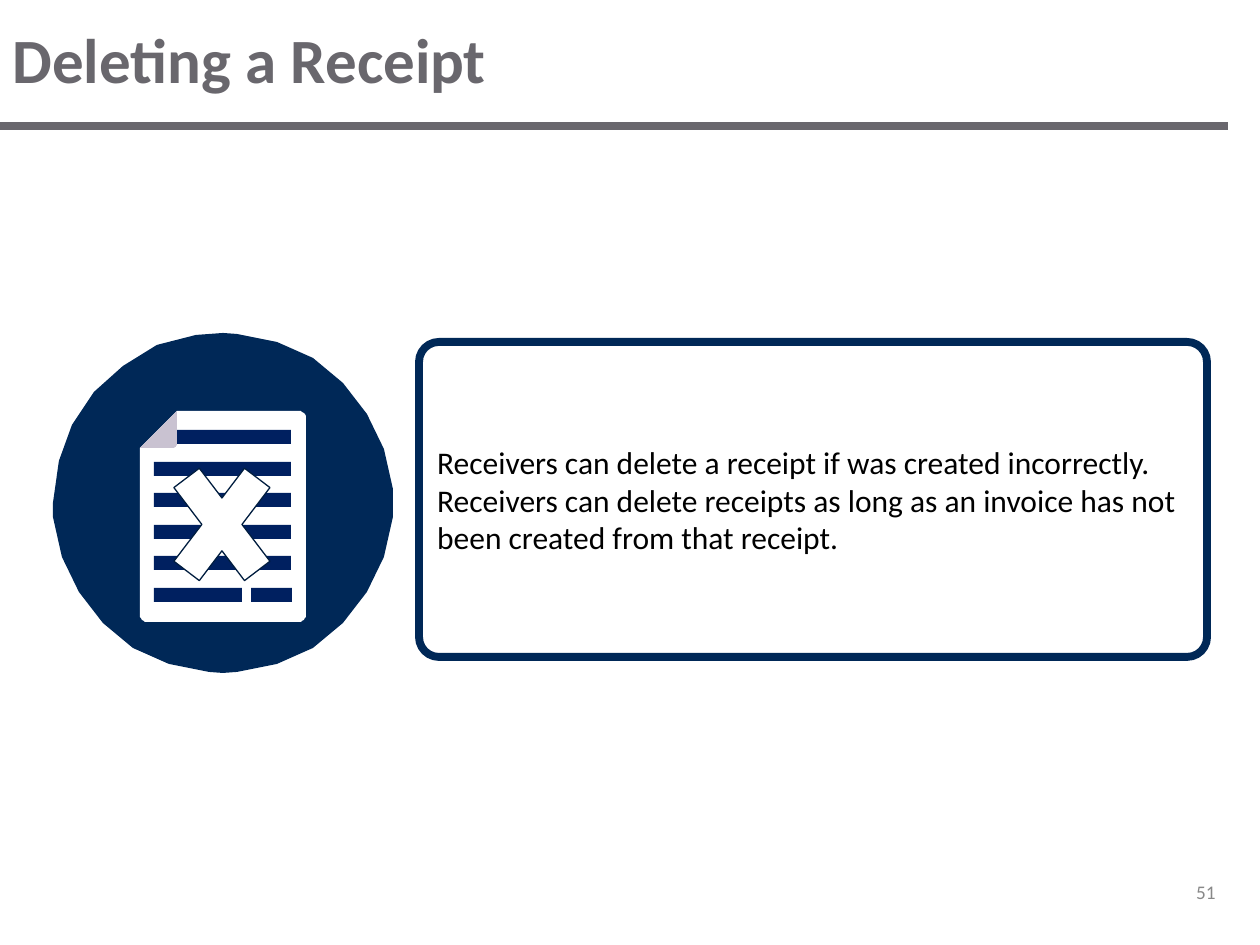
from dataclasses import dataclass
from math import cos, radians, sin

from lxml.etree import SubElement
from pptx import Presentation
from pptx.dml.color import RGBColor
from pptx.enum.shapes import MSO_CONNECTOR, MSO_SHAPE
from pptx.enum.text import MSO_ANCHOR, PP_ALIGN
from pptx.oxml.ns import qn
from pptx.util import Pt

PX = 914400 / 126


@dataclass(frozen=True)
class Theme:
    font: str = "Calibri"
    heading: str = "69676D"
    number: str = "888888"
    text: str = "000000"
    navy: str = "002857"
    bar: str = "002060"
    outline: str = "001D3F"
    paper: str = "FFFFFF"
    fold: str = "C9C2D1"
    title_pt: int = 36
    body_pt: int = 18
    number_pt: int = 11


THEME = Theme()


def emu(*lengths):
    return [round(n * PX) for n in lengths]


def rgb(color):
    return RGBColor.from_string(color)


def paint(sp, fill=None, line=None, width=0):
    sp.shadow.inherit = False
    if fill:
        sp.fill.solid()
        sp.fill.fore_color.rgb = rgb(fill)
    else:
        sp.fill.background()
    if line:
        sp.line.color.rgb = rgb(line)
        sp.line.width = Pt(width)
    else:
        sp.line.fill.background()


def add_preset(shapes, kind, box, **style):
    sp = shapes.add_shape(kind, *emu(*box))
    paint(sp, **style)
    return sp


def add_polygon(shapes, x, y, points, fill):
    start, *rest = [(x + px, y + py) for px, py in points]
    builder = shapes.build_freeform(*start, scale=PX)
    builder.add_line_segments(rest, close=True)
    paint(builder.convert_to_shape(), fill)


def corner(cx, cy, radius, start):
    angles = [radians(start + step) for step in range(0, 91, 15)]
    return [(cx + radius * cos(a), cy + radius * sin(a)) for a in angles]


def write(sp, text, size, color, align=PP_ALIGN.LEFT, bold=False):
    tf = sp.text_frame
    tf.word_wrap = True
    tf.vertical_anchor = MSO_ANCHOR.MIDDLE
    p = tf.paragraphs[0]
    p.alignment = align
    r = p.add_run()
    r.text = text
    r.font.name = THEME.font
    r.font.size = Pt(size)
    r.font.bold = bold
    r.font.color.rgb = rgb(color)


def add_header(s, x, y, w, h):
    title = s.shapes.title
    title.left, title.top, title.width, title.height = emu(x, y, w, h)
    write(title, "Deleting a Receipt", THEME.title_pt, THEME.heading, bold=True)
    rule_y = y + h + 10
    rule = s.shapes.add_connector(
        MSO_CONNECTOR.STRAIGHT, *emu(x, rule_y, x + w - 32, rule_y))
    rule.line.color.rgb = rgb(THEME.heading)
    rule.line.width = Pt(5)
    SubElement(rule._element.spPr, qn("a:effectLst"))


def add_page_number(s, x, y, w, h):
    sp = s.shapes.add_textbox(*emu(x, y, w, h))
    write(sp, "51", THEME.number_pt, THEME.number, PP_ALIGN.RIGHT)


def add_message(s, x, y, w, h):
    sp = add_preset(s.shapes, MSO_SHAPE.ROUNDED_RECTANGLE, (x, y, w, h),
                    line=THEME.navy, width=4.5)
    sp.adjustments[0] = 0.063
    write(sp, "Receivers can delete a receipt if was created incorrectly. "
              "Receivers can delete receipts as long as an invoice has not "
              "been created from that receipt.", THEME.body_pt, THEME.text)


def add_disc(s, x, y, size):
    lower_left = [(-170, 0), (-170, 14), (-161, 54), (-144, 89), (-120, 120),
                  (-90, 145), (-54, 161), (-14, 169), (0, 170)]
    lower_right = [(-px, py) for px, py in reversed(lower_left)]
    upper_right = [(-px, -py) for px, py in lower_left]
    upper_left = [(-27, -168), (-66, -158), (-100, -137),
                  (-129, -111), (-151, -78), (-164, -42)]
    outline = lower_left + lower_right[1:] + upper_right[1:] + upper_left
    add_polygon(s.shapes, x + size / 2, y + size / 2, outline, THEME.navy)


def add_document(s, x, y, w, h):
    shapes = s.shapes.add_group_shape().shapes
    fold, radius = 37, 7
    sheet = [(fold, 0), (0, fold),
             *reversed(corner(radius, h - radius, radius, 90)),
             *reversed(corner(w - radius, h - radius, radius, 0)),
             *reversed(corner(w - radius, radius, radius, 270))]
    add_polygon(shapes, x, y, sheet, THEME.paper)

    margin, top, pitch, last = 14, 19, 31.6, 5
    bars = [(0, fold - margin - 12, 126)]
    bars += [(row, 0, 137) for row in range(1, last)]
    bars += [(last, 0, 88), (last, 97, 41)]
    for row, indent, length in bars:
        box = (x + margin + indent, y + top + round(row * pitch), length, 14)
        add_preset(shapes, MSO_SHAPE.RECTANGLE, box, fill=THEME.bar)

    flap = [(fold, 0), (0, fold), *reversed(corner(fold - 4, fold - 4, 4, 0))]
    add_polygon(shapes, x, y, flap, THEME.fold)


def add_cross(s, x, y, w, h):
    sp = add_preset(s.shapes, MSO_SHAPE.MATH_MULTIPLY, (x, y, w, h),
                    fill=THEME.paper, line=THEME.outline, width=0.75)
    sp.adjustments[0] = 0.235


def add_delete_icon(s, x, y, size):
    add_disc(s, x, y, size)
    add_document(s, x + 87, y + 78, 166, 211)
    add_cross(s, x + 101, y + 102, 136, 179)


def main():
    prs = Presentation()
    prs.slide_width, prs.slide_height = emu(1260, 945)
    s = prs.slides.add_slide(prs.slide_layouts[5])
    add_header(s, 0, 0, 1260, 116)
    add_page_number(s, 903, 867, 325, 50)
    add_message(s, 419, 342, 788, 315)
    add_delete_icon(s, 53, 333, 340)
    prs.save("out.pptx")


if __name__ == "__main__":
    main()
